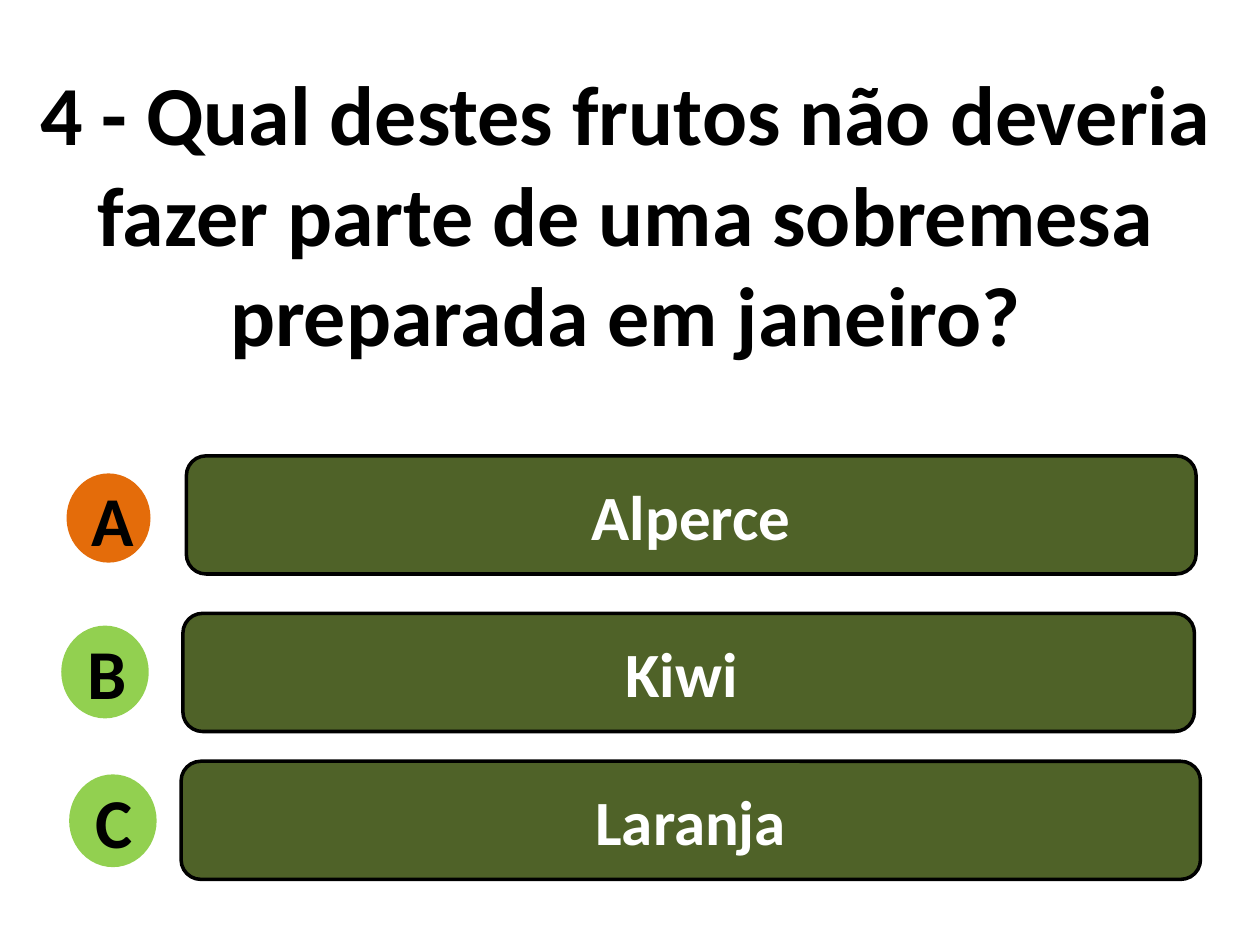
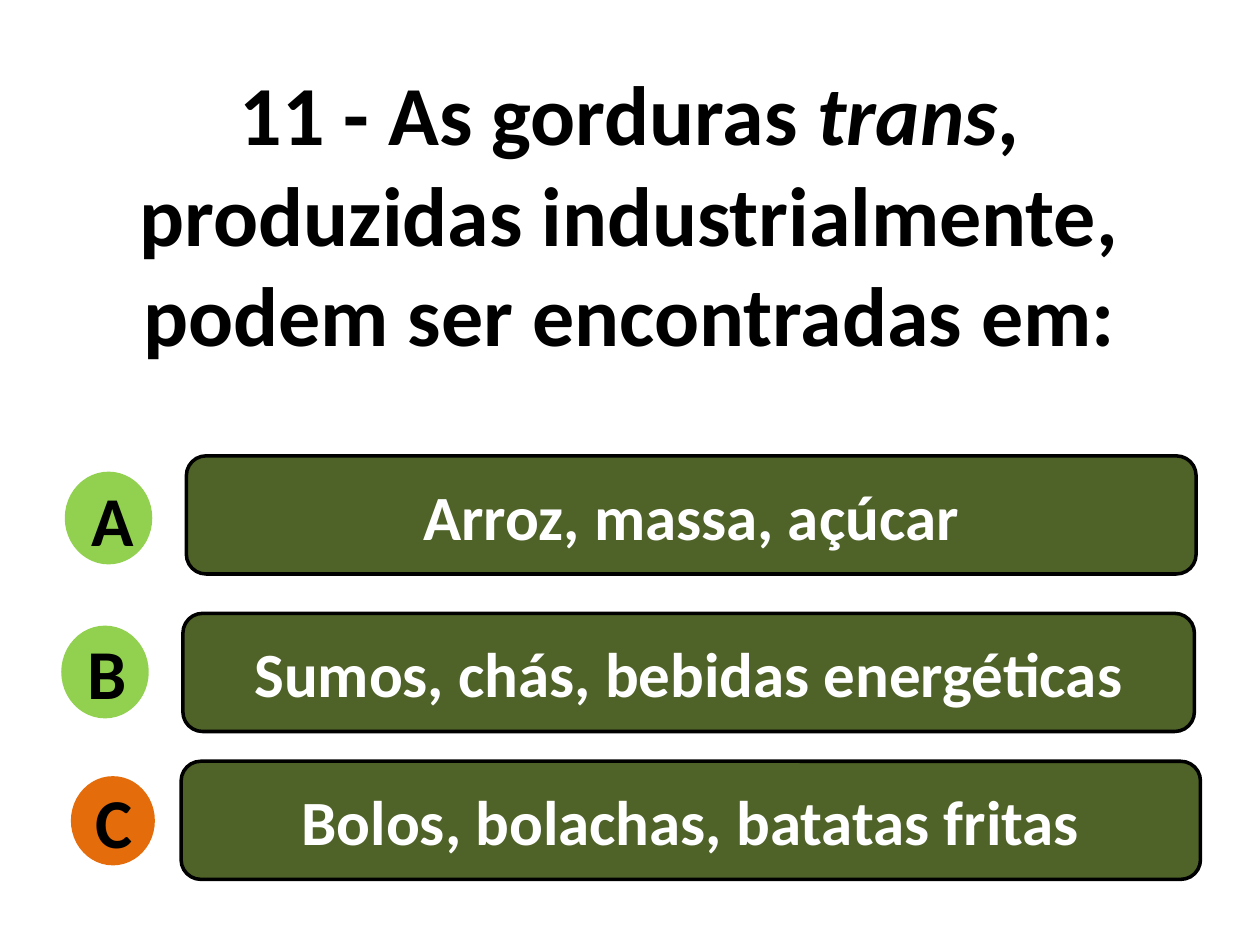
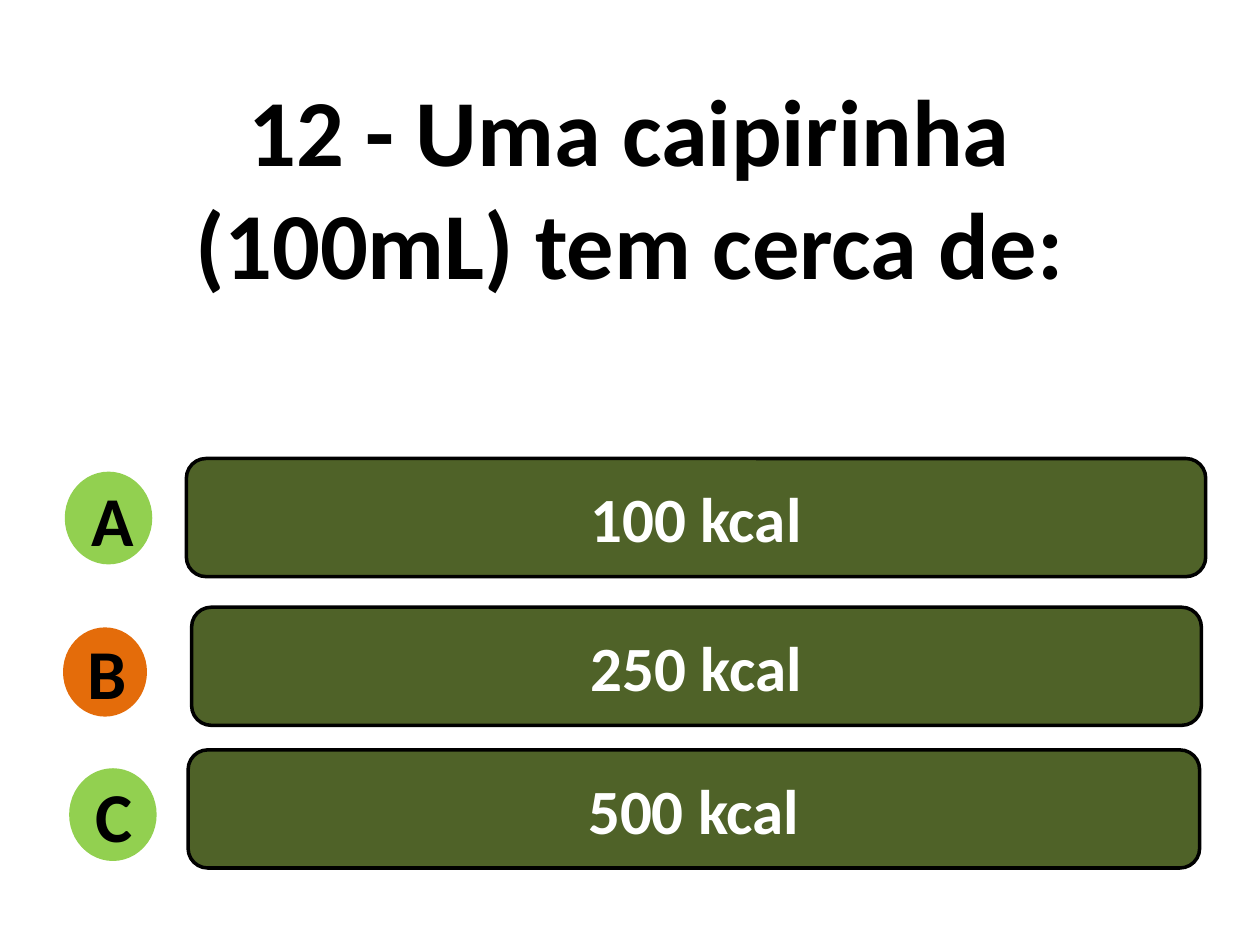
"""Build three quiz slides, each with a question and three lettered answers."""
from dataclasses import dataclass

from pptx import Presentation
from pptx.dml.color import RGBColor
from pptx.enum.shapes import MSO_SHAPE
from pptx.enum.text import MSO_ANCHOR, MSO_AUTO_SIZE, PP_ALIGN
from pptx.util import Pt


@dataclass(frozen=True)
class Theme:
    font: str = "Calibri"
    ink: str = "000000"
    paper: str = "FFFFFF"
    bar: str = "4F6228"
    plain: str = "92D050"
    right: str = "E46C0A"
    ask: int = 48
    large: int = 54
    answer: int = 36
    letter: int = 40
    line: int = 2


BAR_HIGH = 67.5
DOT_SIZE = (48, 51)
DOTS = [(38, 270.5), (36, 358.5), (40.5, 443.5)]
LAST_DOTS = DOTS[:2] + [(40.5, 440)]
BARS = [(106.5, 260.5, 577), (104.5, 350.5, 578), (103.5, 435, 582.5)]
LAST_BARS = [(106.5, 262, 582.5), (109.5, 347, 577), (107.5, 428.5, 578)]
THEME = Theme()

QUIZ = [
    (["4 - Qual destes frutos não deveria fazer parte de uma sobremesa "
      "preparada em janeiro?"],
     (14.5, 31.5, 686, 181.5), THEME.ask,
     ["Alperce", "Kiwi ", "Laranja"], "A", BARS, DOTS),
    (["11 - As gorduras ", "trans",
      ", produzidas industrialmente, podem ser encontradas em:"],
     (48, 31.5, 623.5, 181.5), THEME.ask,
     ["Arroz, massa, açúcar", "Sumos, chás, bebidas energéticas",
      "Bolos, bolachas, batatas fritas"], "C", BARS, DOTS),
    (["12 - Uma caipirinha (100mL) tem cerca de:"],
     (48, 37.5, 623.5, 138), THEME.large,
     ["100 kcal", "250 kcal", "500 kcal"], "B", LAST_BARS, LAST_DOTS),
]


class Deck:
    def __init__(self, theme):
        self.theme = theme
        self.deck = Presentation()
        self.deck.slide_width, self.deck.slide_height = Pt(720), Pt(540)
        self.slide = None

    def start(self):
        self.slide = self.deck.slides.add_slide(self.deck.slide_layouts[5])

    def style(self, para, size, color):
        para.alignment = PP_ALIGN.CENTER
        for run in para.runs:
            font = run.font
            font.name, font.size, font.bold = self.theme.font, Pt(size), True
            font.color.rgb = RGBColor.from_string(color)

    def title(self, parts, box, size):
        shape = self.slide.shapes.title
        shape.left, shape.top, shape.width, shape.height = map(Pt, box)
        frame = shape.text_frame
        frame.word_wrap = True
        frame.auto_size = MSO_AUTO_SIZE.SHAPE_TO_FIT_TEXT
        frame.vertical_anchor = MSO_ANCHOR.TOP
        para = frame.paragraphs[0]
        for spot, part in enumerate(parts):
            run = para.add_run()
            run.text = part
            run.font.italic = spot % 2 == 1
        self.style(para, size, self.theme.ink)

    def shape(self, kind, box, fill, line, text, size, color):
        shape = self.slide.shapes.add_shape(kind, *map(Pt, box))
        shape.shadow.inherit = False
        shape.fill.solid()
        shape.fill.fore_color.rgb = RGBColor.from_string(fill)
        if line:
            shape.line.color.rgb = RGBColor.from_string(line)
            shape.line.width = Pt(self.theme.line)
        else:
            shape.line.fill.background()
        frame = shape.text_frame
        frame.text = text
        frame.vertical_anchor = MSO_ANCHOR.MIDDLE
        self.style(frame.paragraphs[0], size, color)

    def bar(self, spot, text):
        look = self.theme
        self.shape(MSO_SHAPE.FLOWCHART_ALTERNATE_PROCESS, (*spot, BAR_HIGH),
                   look.bar, look.ink, text, look.answer, look.paper)

    def dot(self, spot, text, right):
        look = self.theme
        fill, line = (look.right, None) if right else (look.plain, look.plain)
        self.shape(MSO_SHAPE.OVAL, (*spot, *DOT_SIZE),
                   fill, line, text, look.letter, look.ink)


def main():
    deck = Deck(THEME)
    for parts, box, size, answers, right, bars, dots in QUIZ:
        deck.start()
        deck.title(parts, box, size)
        for letter, answer, bar, dot in zip("ABC", answers, bars, dots):
            deck.bar(bar, answer)
            deck.dot(dot, letter, letter == right)
    deck.deck.save("out.pptx")


if __name__ == "__main__":
    main()
